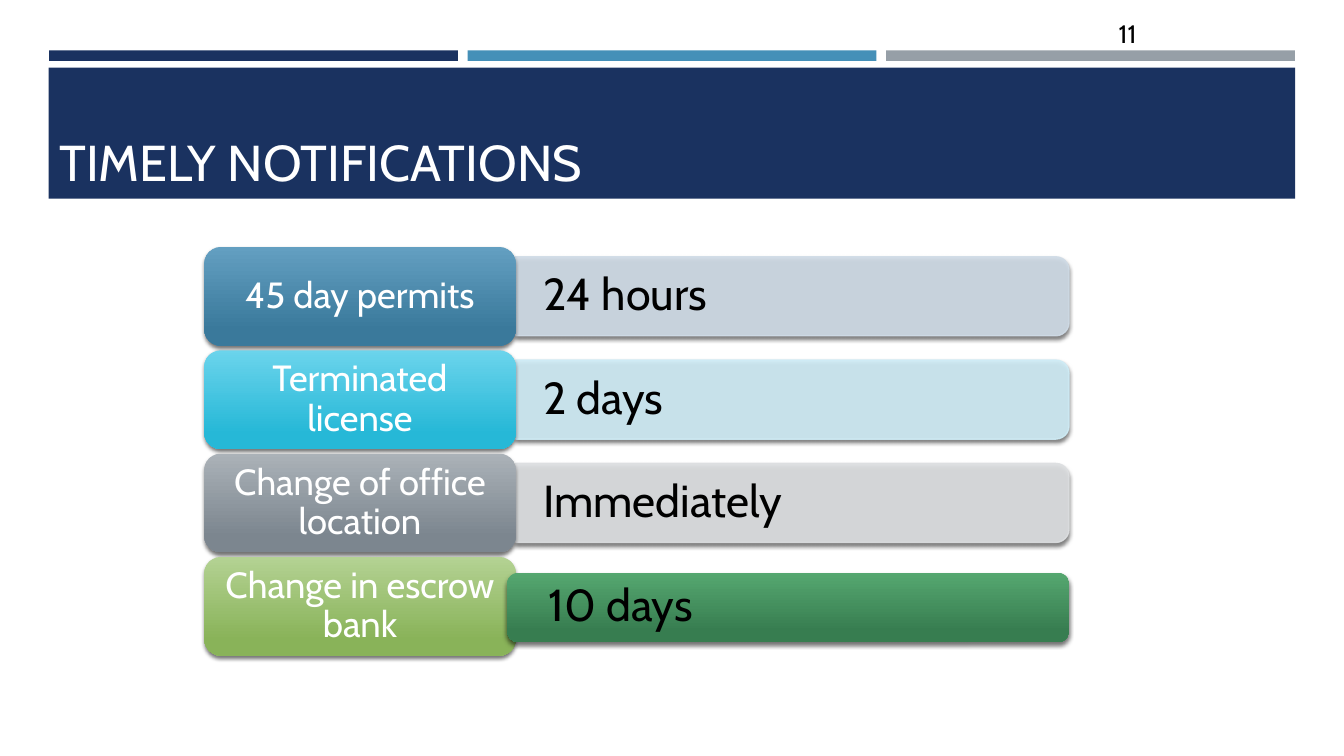
import pptx
import pptx.util
import pptx.dml.color
import pptx.enum.shapes
import pptx.enum.text
import pptx.oxml.ns
from lxml import etree

Pt = pptx.util.Pt
RGB = pptx.dml.color.RGBColor.from_string
SHAPE = pptx.enum.shapes.MSO_SHAPE
ALIGN = pptx.enum.text.PP_ALIGN
ANCHOR = pptx.enum.text.MSO_ANCHOR
qn = pptx.oxml.ns.qn

theme = {
    "font": "Cabin", "navy": "1A3260", "blue": "4590B8", "gray": "969FA7",
    "white": "FFFFFF", "black": "000000", "escrow_bar": ("55A770", "377D50"),
    "title": 36, "number": 18, "event": 26, "deadline": 32,
}

notifications = [
    ("45 day permits", "24 hours", ("639FC1", "3A799B"), "CFDBE6"),
    ("Terminated license", "2 days", ("6BD4EC", "26B8D7"), "CFECF6"),
    ("Change of office location", "Immediately", ("ABB2B8", "7C868F"), "DDDFE1"),
    ("Change in escrow bank", "10 days", ("B4D293", "89B359"), None),
]

deck = pptx.Presentation()
deck.slide_width, deck.slide_height = Pt(960), Pt(540)
slide = deck.slides.add_slide(deck.slide_layouts[6])


def draw(kind, left, top, width, height, colors, shadowed=False):
    shape = slide.shapes.add_shape(kind, Pt(left), Pt(top), Pt(width), Pt(height))
    shape.shadow.inherit = False
    shape.line.fill.background()
    if isinstance(colors, tuple):
        shape.fill.gradient()
        shape.fill.gradient_angle = 270
        for stop, color, position in zip(shape.fill.gradient_stops, colors, (0, 0.84)):
            stop.color.rgb = RGB(color)
            stop.position = position
    else:
        shape.fill.solid()
        shape.fill.fore_color.rgb = RGB(colors)
    if shadowed:
        effects = shape.element.spPr.find(qn("a:effectLst"))
        outer = etree.SubElement(effects, qn("a:outerShdw"), blurRad=str(Pt(3)),
                                 dist=str(Pt(2)), dir="5400000", rotWithShape="0")
        tint = etree.SubElement(outer, qn("a:srgbClr"), val=theme["black"])
        etree.SubElement(tint, qn("a:alpha"), val="55000")
    return shape


def write(shape, words, size, color, align=ALIGN.LEFT, anchor=ANCHOR.MIDDLE,
          inset=7.2, spacing=0.9):
    frame = shape.text_frame
    frame.word_wrap = True
    frame.vertical_anchor = anchor
    frame.margin_left = frame.margin_right = Pt(inset)
    frame.margin_top = frame.margin_bottom = Pt(3.6)
    frame.text = words
    paragraph = frame.paragraphs[0]
    paragraph.alignment = align
    paragraph.line_spacing = spacing
    font = paragraph.runs[0].font
    font.name = theme["font"]
    font.size = Pt(theme[size])
    font.color.rgb = RGB(theme[color])


for column, accent in enumerate(("navy", "blue", "gray")):
    draw(SHAPE.RECTANGLE, 35 + column * 299, 36, 292, 7.5, theme[accent])
draw(SHAPE.RECTANGLE, 34.8, 48.4, 890.4, 93.6, theme["navy"])

title = slide.shapes.add_textbox(Pt(35.3), Pt(62.6), Pt(648), Pt(77.8))
write(title, "TIMELY NOTIFICATIONS", "title", "white", anchor=ANCHOR.BOTTOM, spacing=1)
page_number = slide.shapes.add_textbox(Pt(792), Pt(9.4), Pt(41.8), Pt(28.8))
write(page_number, "11", "number", "black", anchor=ANCHOR.TOP, spacing=1)

tab_height, pitch = 70.5, 73.8
bar_left, bar_width, bar_height = 368.3, 395.3, 56.4

for row, (event, deadline, tab_colors, bar_color) in enumerate(notifications):
    tab_top = 176.4 + row * pitch
    middle = tab_top + tab_height / 2
    if bar_color:
        bar = draw(SHAPE.ROUND_2_SAME_RECTANGLE,
                   bar_left + (bar_width - bar_height) / 2, middle - bar_width / 2,
                   bar_height, bar_width, bar_color, True)
        bar.rotation = 90
        bar.line.color.rgb = RGB(bar_color)
        bar.line.width = Pt(1)
        for tint in bar.element.spPr.findall(".//" + qn("a:solidFill") + "/" + qn("a:srgbClr")):
            etree.SubElement(tint, qn("a:alpha"), val="90000")
        label = slide.shapes.add_textbox(Pt(bar_left), Pt(middle - 25.2), Pt(393), Pt(50.4))
        write(label, deadline, "deadline", "black", inset=19.8)
    tab = draw(SHAPE.ROUNDED_RECTANGLE, 146, tab_top, 222.4, tab_height, tab_colors, True)
    write(tab, event, "event", "white", ALIGN.CENTER, inset=7.5)
    if not bar_color:
        bar = draw(SHAPE.ROUNDED_RECTANGLE, 362.2, 409, 401.6, 49.8,
                   theme["escrow_bar"], True)
        write(bar, deadline, "deadline", "black", inset=27)

deck.save("out.pptx")
